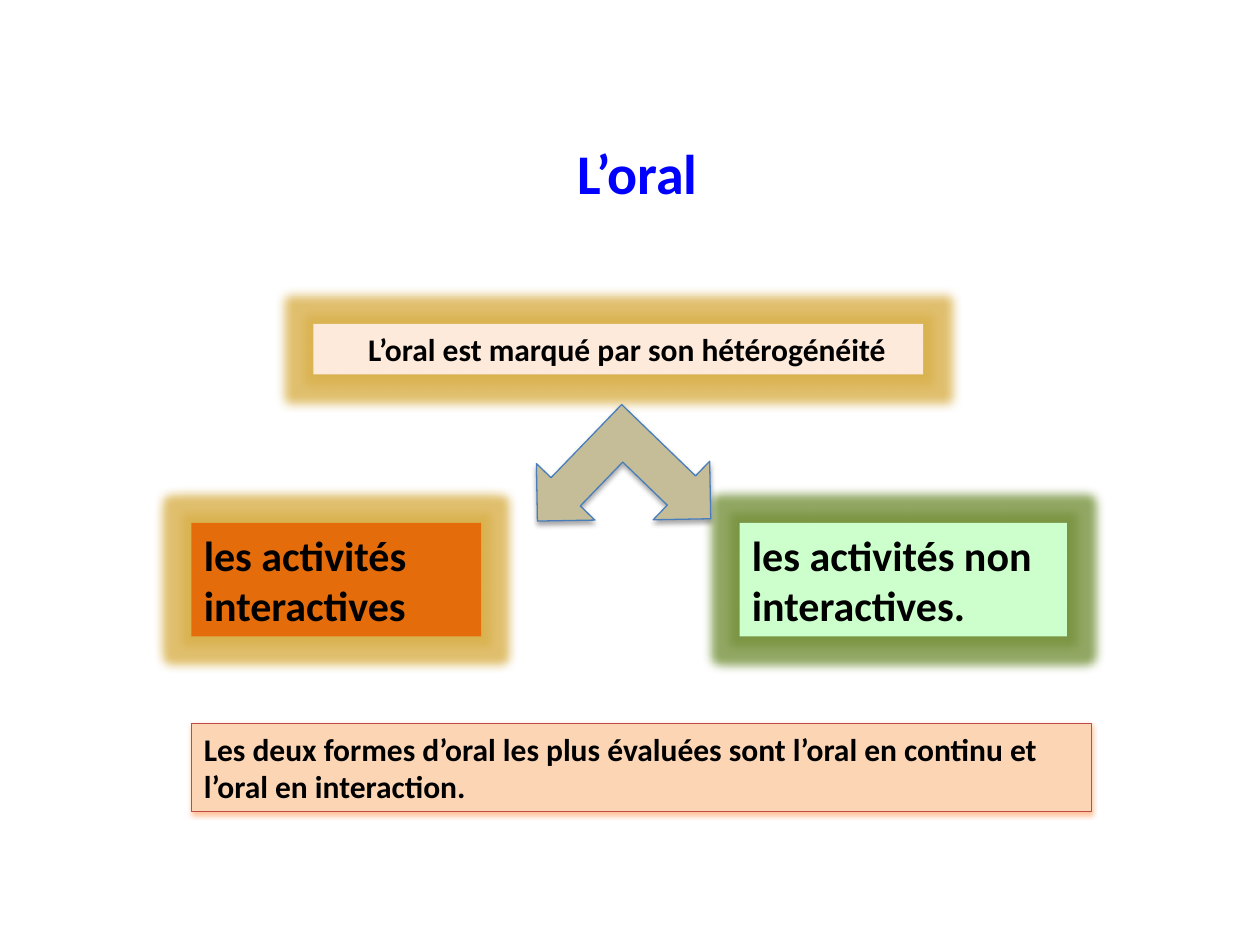
from lxml import etree
from pptx import Presentation
from pptx import util as u
from pptx.dml.color import RGBColor
from pptx.enum import shapes, text
from pptx.oxml.ns import qn

FONT = "Calibri"
GOLD = "D9B04A"
GREEN = "76923C"


def set_colour(colour_format, value):
    colour_format.rgb = RGBColor.from_string(value)


def write_text(shape, wording, size, colour="000000", align=text.PP_ALIGN.LEFT, indent=0.25):
    frame = shape.text_frame
    frame.text = wording
    frame.word_wrap = True
    frame.auto_size = text.MSO_AUTO_SIZE.NONE
    frame.vertical_anchor = text.MSO_ANCHOR.TOP
    frame.margin_left = u.Cm(indent)
    frame.margin_right = u.Cm(0.25)
    frame.margin_top = frame.margin_bottom = u.Cm(0.13)
    paragraph = frame.paragraphs[0]
    paragraph.alignment = align
    font = paragraph.runs[0].font
    font.name = FONT
    font.size = u.Pt(size)
    font.bold = True
    set_colour(font.color, colour)


def add_effect(shape, kind, colour, opacity, **settings):
    effects = shape._element.spPr.find(qn("a:effectLst"))
    effect = etree.SubElement(effects, qn(f"a:{kind}"))
    for name, value in settings.items():
        effect.set(name, str(value))
    tint = etree.SubElement(effect, qn("a:srgbClr"), val=colour)
    etree.SubElement(tint, qn("a:alpha"), val=str(opacity * 1000))


def add_glow(shape, colour):
    add_effect(shape, "glow", colour, 80, rad=u.Pt(11))


def add_shadow(shape, colour, opacity, distance):
    add_effect(shape, "outerShdw", colour, opacity, blurRad=u.Pt(3.1),
               dist=u.Pt(distance), dir=5400000, rotWithShape=0)


def add_figure(slide, kind, left, top, width, height, fill, line=None):
    shape = slide.shapes.add_shape(kind, u.Cm(left), u.Cm(top), u.Cm(width), u.Cm(height))
    shape.shadow.inherit = False
    shape.fill.solid()
    set_colour(shape.fill.fore_color, fill)
    if line:
        set_colour(shape.line.color, line)
        shape.line.width = u.Pt(0.75)
    else:
        shape.line.fill.background()
    return shape


def add_title(slide, wording):
    title = slide.shapes.title
    title.left, title.top = u.Cm(4.33), u.Cm(2.67)
    title.width, title.height = u.Cm(17.04), u.Cm(1.6)
    write_text(title, wording, 32, "0000FF", text.PP_ALIGN.CENTER)


def add_glowing_box(slide, wording, left, top, width, height, fill, glow, size, indent=0.25):
    box = add_figure(slide, shapes.MSO_SHAPE.RECTANGLE, left, top, width, height, fill)
    add_glow(box, glow)
    write_text(box, wording, size, indent=indent)


def add_split_arrow(slide):
    arrow = add_figure(slide, shapes.MSO_SHAPE.LEFT_UP_ARROW,
                       10.92, 8.26, 3.3, 3.28, "C4BD97", "4A7EBB")
    arrow.rotation = 224
    add_shadow(arrow, "000000", 35, 1.8)


def add_conclusion(slide, wording):
    box = add_figure(slide, shapes.MSO_SHAPE.RECTANGLE,
                     3.86, 14.58, 18.14, 1.78, "FCD5B5", "BE4B48")
    add_shadow(box, "FF6600", 38, 1.6)
    write_text(box, wording, 18)


def main():
    presentation = Presentation()
    presentation.slide_width = u.Cm(25.4)
    presentation.slide_height = u.Cm(19.05)
    slide = presentation.slides.add_slide(presentation.slide_layouts[5])
    add_title(slide, "L’oral")
    add_glowing_box(slide, "L’oral est marqué par son hétérogénéité",
                    6.32, 6.53, 12.29, 1.02, "FDEADA", GOLD, 18, indent=1.1)
    add_glowing_box(slide, "les activités interactives",
                    3.86, 10.54, 5.84, 2.29, "E46C0A", GOLD, 24)
    add_glowing_box(slide, "les activités non interactives.",
                    14.91, 10.54, 6.6, 2.29, "CCFFCC", GREEN, 24)
    add_split_arrow(slide)
    add_conclusion(slide, "Les deux formes d’oral les plus évaluées sont "
                          "l’oral en continu et l’oral en interaction.")
    presentation.save("out.pptx")


if __name__ == "__main__":
    main()
